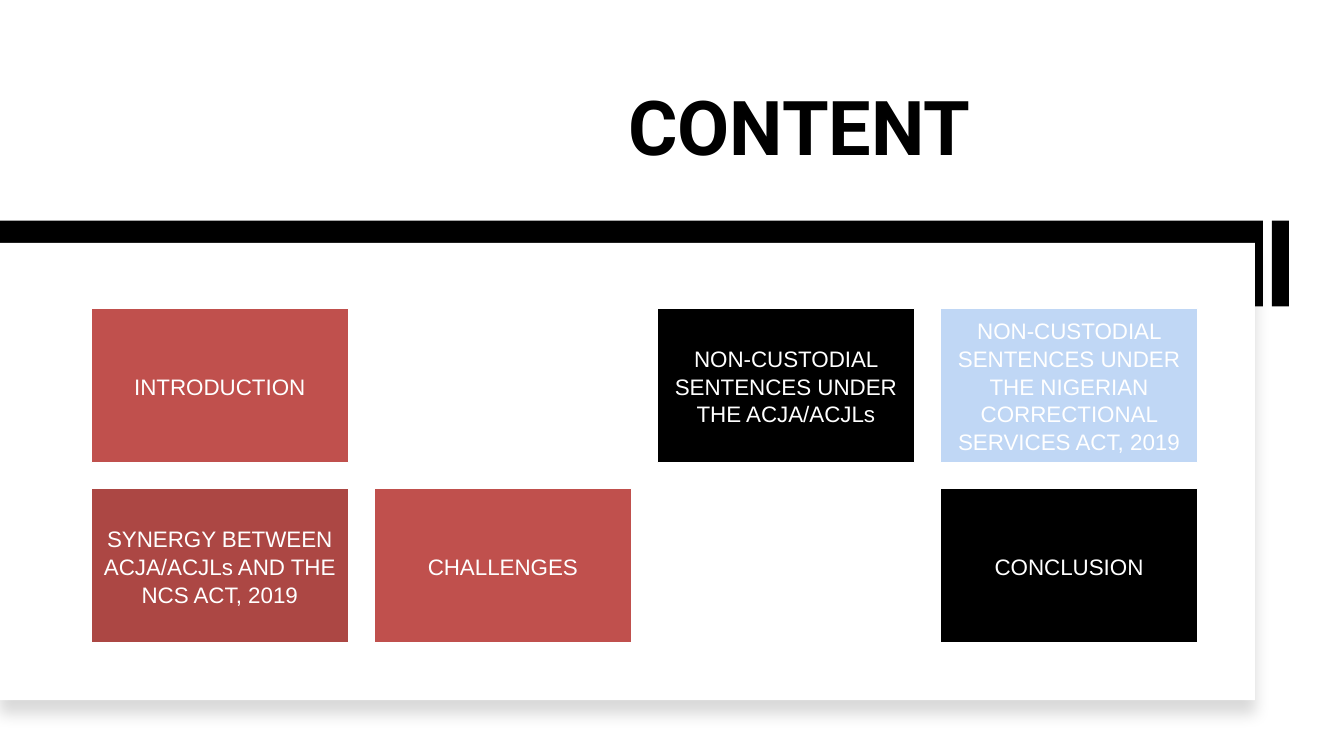
import pptx
import pptx.dml.color
import pptx.enum.shapes
import pptx.enum.text
import pptx.oxml
import pptx.oxml.ns
import pptx.util

Pt = pptx.util.Pt

BLACK, WHITE, RED, DARK_RED, PALE_BLUE = "000000", "FFFFFF", "C0504D", "AC4744", "C0D7F5"
COLUMNS = 4
TILE_LEFT, TILE_TOP = 65.2, 220.3
TILE_WIDTH, TILE_HEIGHT = 183.6, 110.2
TILE_GAP = 18.6
TILES = [
    ("INTRODUCTION", RED),
    ("", WHITE),
    ("NON-CUSTODIAL SENTENCES UNDER THE ACJA/ACJLs", BLACK),
    ("NON-CUSTODIAL SENTENCES UNDER THE NIGERIAN CORRECTIONAL SERVICES ACT, 2019", PALE_BLUE),
    ("SYNERGY BETWEEN ACJA/ACJLs AND THE NCS ACT, 2019", DARK_RED),
    ("CHALLENGES", RED),
    ("", WHITE),
    ("CONCLUSION", BLACK),
]


def color(value):
    return pptx.dml.color.RGBColor.from_string(value)


def add_rectangle(page, left, top, width, height, fill, line=None):
    box = page.shapes.add_shape(
        pptx.enum.shapes.MSO_SHAPE.RECTANGLE, Pt(left), Pt(top), Pt(width), Pt(height))
    box.shadow.inherit = False
    box.fill.solid()
    box.fill.fore_color.rgb = color(fill)
    if line:
        box.line.color.rgb = color(line)
        box.line.width = Pt(1)
    else:
        box.line.fill.background()
    return box


def add_soft_shadow(box):
    effects = box._element.spPr.find(pptx.oxml.ns.qn("a:effectLst"))
    effects.append(pptx.oxml.parse_xml(
        f'<a:outerShdw {pptx.oxml.ns.nsdecls("a")} blurRad="{Pt(11)}" dist="{Pt(10)}" '
        f'dir="5400000" algn="t" rotWithShape="0"><a:srgbClr val="{BLACK}">'
        '<a:alpha val="15000"/></a:srgbClr></a:outerShdw>'))


def write_text(box, text, font, size, fill, bold=False, spacing=1.0):
    box.text_frame.word_wrap = True
    para = box.text_frame.paragraphs[0]
    para.alignment = pptx.enum.text.PP_ALIGN.CENTER
    para.line_spacing = spacing
    span = para.add_run()
    span.text = text
    span.font.name = font
    span.font.size = Pt(size)
    span.font.bold = bold
    span.font.color.rgb = color(fill)


def add_title(page, text):
    box = page.shapes.add_textbox(Pt(63.4), Pt(30.2), Pt(727.2), Pt(93.6))
    frame = box.text_frame
    frame.vertical_anchor = pptx.enum.text.MSO_ANCHOR.BOTTOM
    frame.margin_left = Pt(295)
    frame.margin_bottom = Pt(2)
    write_text(box, text, "Roboto", 54, BLACK, bold=True)


def add_tile(page, index, text, fill):
    row, column = divmod(index, COLUMNS)
    box = add_rectangle(
        page,
        TILE_LEFT + column * (TILE_WIDTH + TILE_GAP),
        TILE_TOP + row * (TILE_HEIGHT + TILE_GAP),
        TILE_WIDTH, TILE_HEIGHT, fill, line=WHITE)
    if text:
        frame = box.text_frame
        frame.vertical_anchor = pptx.enum.text.MSO_ANCHOR.MIDDLE
        frame.margin_left = frame.margin_right = Pt(5)
        frame.margin_top = frame.margin_bottom = Pt(5)
        write_text(box, text, "Arial", 16, WHITE, spacing=1.04)


def main():
    deck = pptx.Presentation()
    deck.slide_width, deck.slide_height = Pt(960), Pt(540)
    page = deck.slides.add_slide(deck.slide_layouts[6])

    add_title(page, "CONTENT")

    # Black bands behind the white panel
    add_rectangle(page, 908.6, 157.6, 12.2, 61.2, BLACK)
    add_rectangle(page, 0, 157.6, 902, 61.2, BLACK)
    panel = add_rectangle(page, 0, 173.4, 896.4, 326.8, WHITE)
    add_soft_shadow(panel)

    # Grid of topics
    for index, (text, fill) in enumerate(TILES):
        add_tile(page, index, text, fill)

    deck.save("out.pptx")


if __name__ == "__main__":
    main()
